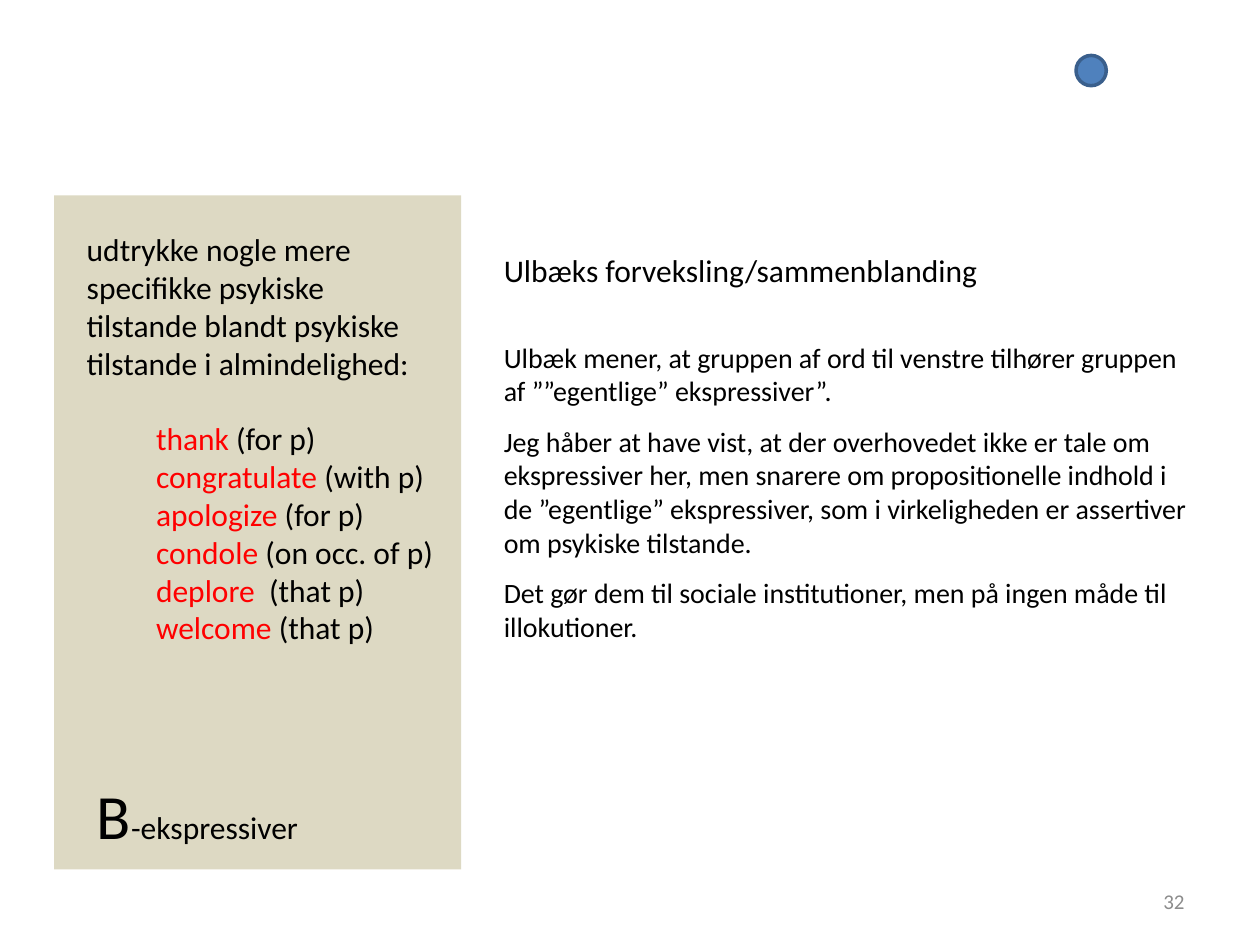
from pptx import Presentation
from pptx.dml.color import RGBColor
from pptx.enum import shapes, text
from pptx.util import Inches, Pt

BLACK = RGBColor(0x00, 0x00, 0x00)
RED = RGBColor(0xFF, 0x00, 0x00)
GREY = RGBColor(0x8C, 0x8C, 0x8C)
SAND = RGBColor(0xDD, 0xD9, 0xC3)
BLUE = RGBColor(0x4F, 0x81, 0xBD)
DARK_BLUE = RGBColor(0x3A, 0x5F, 0x8C)

DEFINITION = [
    "udtrykke nogle mere",
    "specifikke psykiske tilstande blandt psykiske tilstande i almindelighed:",
]
VERBS = [
    ("thank ", "(for p)"),
    ("congratulate ", "(with p)"),
    ("apologize ", "(for p)"),
    ("condole ", "(on occ. of p)"),
    ("deplore  ", "(that p)"),
    ("welcome", " (that p)"),
]
ARGUMENT = [
    "Ulbæk mener, at gruppen af ord til venstre tilhører gruppen af "
    "””egentlige” ekspressiver”.",
    "Jeg håber at have vist, at der overhovedet ikke er tale om ekspressiver "
    "her, men snarere om propositionelle indhold i de ”egentlige” "
    "ekspressiver, som i virkeligheden er assertiver om psykiske tilstande.",
    "Det gør dem til sociale institutioner, men på ingen måde til illokutioner.",
]


def box(left, top, width, height):
    return [Inches(value) for value in (left, top, width, height)]


def add_figure(slide, kind, position, fill, outline=None):
    shape = slide.shapes.add_shape(kind, *box(*position))
    shape.shadow.inherit = False
    shape.fill.solid()
    shape.fill.fore_color.rgb = fill
    if outline is None:
        shape.line.fill.background()
    else:
        shape.line.color.rgb = outline
        shape.line.width = Pt(2)


def add_text(slide, position, paragraphs, wrap=True,
             anchor=text.MSO_ANCHOR.TOP, **paragraph_format):
    """Add paragraphs, each a list of (text, size, colour) runs."""
    frame = slide.shapes.add_textbox(*box(*position)).text_frame
    frame.word_wrap = wrap
    frame.vertical_anchor = anchor
    for index, runs in enumerate(paragraphs):
        paragraph = frame.add_paragraph() if index else frame.paragraphs[0]
        for name, value in paragraph_format.items():
            setattr(paragraph, name, value)
        for words, size, colour in runs:
            run = paragraph.add_run()
            run.text = words
            run.font.color.rgb = colour
            for name, value in {"name": "Calibri", "size": Pt(size)}.items():
                setattr(run.font, name, value)


def plain(lines, size):
    return [[(line, size, BLACK)] for line in lines]


def main():
    presentation = Presentation()
    presentation.slide_width = Inches(10)
    presentation.slide_height = Inches(7.5)
    slide = presentation.slides.add_slide(presentation.slide_layouts[6])

    add_text(slide, (7.17, 6.95, 2.33, 0.4), [[("32", 12, GREY)]],
             anchor=text.MSO_ANCHOR.MIDDLE, alignment=text.PP_ALIGN.RIGHT)

    add_figure(slide, shapes.MSO_SHAPE.RECTANGLE, (0.43, 1.55, 3.23, 5.35), SAND)
    add_text(slide, (0.59, 1.78, 2.83, 1.31), plain(DEFINITION, 18))
    add_text(slide, (1.14, 3.28, 2.68, 1.92),
             [[(verb, 18, RED), (complement, 18, BLACK)]
              for verb, complement in VERBS])
    add_text(slide, (0.67, 6.11, 1.81, 0.71),
             [[("B", 36, BLACK), ("-ekspressiver", 18, BLACK)]], wrap=False)

    add_text(slide, (3.9, 2.65, 5.67, 2.52), plain(ARGUMENT, 16),
             space_after=Pt(9.8))
    add_text(slide, (3.9, 1.94, 4, 0.4),
             plain(["Ulbæks forveksling/sammenblanding"], 18), wrap=False)
    add_figure(slide, shapes.MSO_SHAPE.OVAL, (8.54, 0.44, 0.24, 0.24),
               BLUE, DARK_BLUE)

    presentation.save("out.pptx")


if __name__ == "__main__":
    main()
